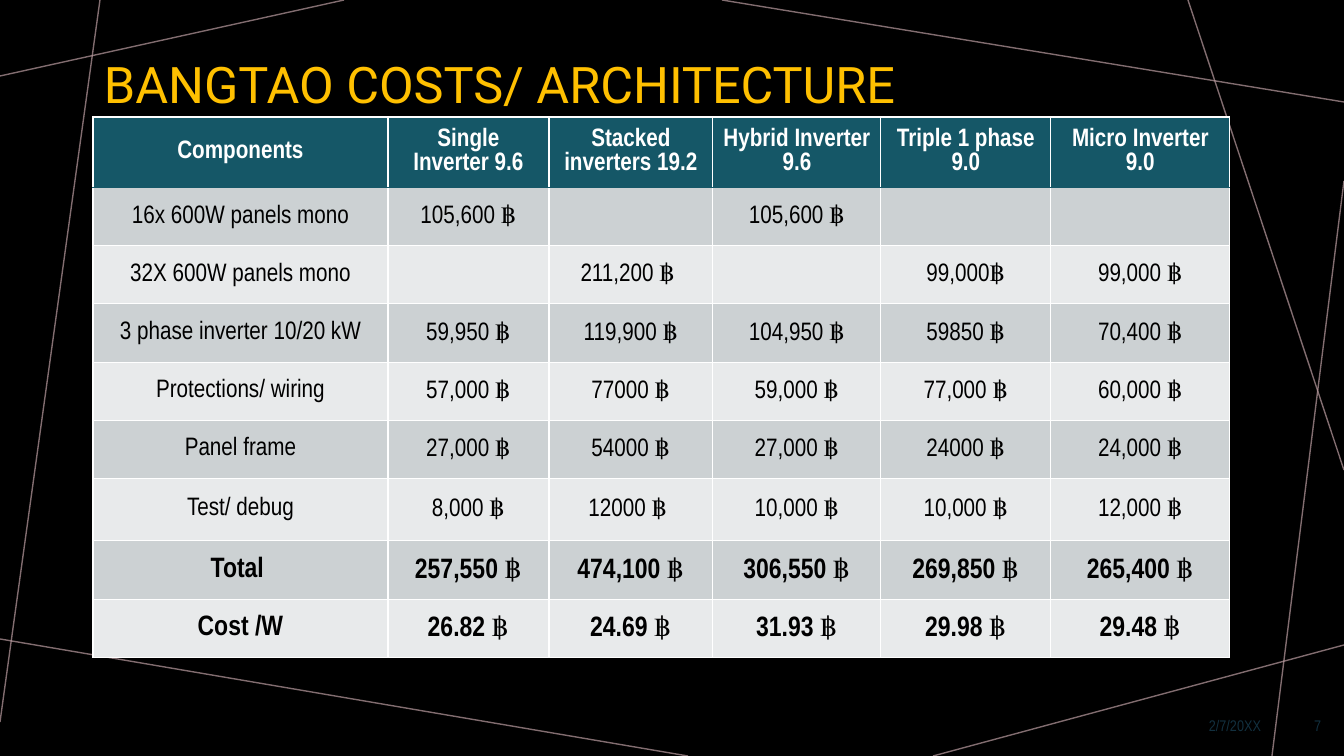
from lxml import etree
from pptx import Presentation
from pptx.dml import color
from pptx.enum import shapes, text
from pptx.oxml import ns
from pptx import util as u

PX = 914400 / 100.8
COLORS = {
    "background": "000000", "web": "BA9CA0", "title": "FFC000",
    "header": "155767", "band_dark": "CCD1D3", "band_light": "E8EAEB",
    "white": "FFFFFF", "black": "000000", "footer": "12303F",
}
BAHT = "฿"
WEB_LINES = [
    (344, 0, 0, 76), (100, 0, 0, 722), (688, 756, 0, 639),
    (1344, 645, 933, 756), (1344, 181, 1272, 756),
    (1344, 470, 1188, 0), (1344, 102, 722, 0),
]
COLUMN_WIDTHS = [295, 161, 164, 168, 170, 179]
ROW_HEIGHTS = [60, 58, 58, 59, 58, 58, 62, 59, 58]
COSTS = [
    ["Components", "Single Inverter 9.6", "Stacked inverters 19.2",
     "Hybrid Inverter 9.6", "Triple 1 phase 9.0", "Micro Inverter 9.0"],
    ["16x 600W panels mono", "105,600 ฿", "", "105,600 ฿", "", ""],
    ["32X 600W panels mono", "", "211,200 ฿ ", "", "99,000฿", "99,000 ฿"],
    ["3 phase inverter 10/20 kW", "59,950 ฿", "119,900 ฿", "104,950 ฿",
     "59850 ฿", "70,400 ฿"],
    ["Protections/ wiring", "57,000 ฿", "77000 ฿", "59,000 ฿", "77,000 ฿",
     "60,000 ฿"],
    ["Panel frame", "27,000 ฿", "54000 ฿", "27,000 ฿", "24000 ฿", "24,000 ฿"],
    ["Test/ debug", "8,000 ฿", "12000 ฿ ", "10,000 ฿", "10,000 ฿", "12,000 ฿"],
    ["Total ", "257,550 ฿", "474,100 ฿", "306,550 ฿", "269,850 ฿",
     "265,400 ฿"],
    ["Cost /W", "26.82 ฿", "24.69 ฿", "31.93 ฿", "29.98 ฿", "29.48 ฿"],
]


def px(length):
    """Turn pixels into EMU."""
    return u.Emu(round(length * PX))


def rgb(name):
    """Look up a named colour."""
    return color.RGBColor.from_string(COLORS[name])


def write(frame, content, *, size, ink, font="Arial Narrow", bold=False,
          align=text.PP_ALIGN.LEFT, spacing=1.0):
    """Fill a text frame, keeping the currency sign regular in bold text."""
    paragraph = frame.paragraphs[0]
    paragraph.alignment = align
    paragraph.line_spacing = spacing
    paragraph.font.size = u.Pt(size)
    pieces = content.partition(BAHT) if bold else [content]
    for piece in filter(None, pieces):
        run = paragraph.add_run()
        run.text = piece
        run.font.name = font
        run.font.size = u.Pt(size)
        run.font.bold = bold and piece != BAHT
        run.font.color.rgb = rgb(ink)


def add_label(slide, content, left, top, width, height, **style):
    """Add a vertically centred text box."""
    frame = slide.shapes.add_textbox(
        px(left), px(top), px(width), px(height)).text_frame
    frame.word_wrap = True
    frame.vertical_anchor = text.MSO_ANCHOR.MIDDLE
    write(frame, content, **style)


def add_web_line(slide, x1, y1, x2, y2):
    """Add one translucent background line."""
    line = slide.shapes.add_connector(
        shapes.MSO_CONNECTOR.STRAIGHT, px(x1), px(y1), px(x2), px(y2))
    line.line.width = u.Pt(1)
    line.line.color.rgb = rgb("web")
    properties = line._element.spPr
    tint = properties.find(".//" + ns.qn("a:srgbClr"))
    etree.SubElement(tint, ns.qn("a:alpha"), val="70000")
    etree.SubElement(properties, ns.qn("a:effectLst"))


def set_borders(cell, **edges):
    """Draw the cell edges from (colour, points) pairs keyed L, R, T, B."""
    properties = cell._tc.get_or_add_tcPr()
    for position, (edge, (name, points)) in enumerate(edges.items()):
        border = etree.Element(ns.qn(f"a:ln{edge}"), w=str(u.Pt(points)))
        fill = etree.SubElement(border, ns.qn("a:solidFill"))
        etree.SubElement(fill, ns.qn("a:srgbClr"), val=COLORS[name])
        properties.insert(position, border)


def row_style(row):
    """Give the fill and text format of a table row."""
    if row == 0:
        return "header", {"size": 18, "ink": "white", "bold": True}
    band = "band_dark" if row % 2 else "band_light"
    summary = row >= len(COSTS) - 2
    return band, {"size": 20 if summary else 18, "ink": "black",
                  "bold": summary}


def add_cost_table(slide, left, top):
    """Add the table of component costs per architecture."""
    table = slide.shapes.add_table(
        len(COSTS), len(COLUMN_WIDTHS), px(left), px(top),
        px(sum(COLUMN_WIDTHS)), px(sum(ROW_HEIGHTS))).table
    for column, width in zip(table.columns, COLUMN_WIDTHS):
        column.width = px(width)
    white, seam = ("white", 1), ("header", 0.75)
    for row, (costs, height) in enumerate(zip(COSTS, ROW_HEIGHTS)):
        table.rows[row].height = px(height)
        fill, style = row_style(row)
        for column, cost in enumerate(costs):
            cell = table.cell(row, column)
            cell.fill.solid()
            cell.fill.fore_color.rgb = rgb(fill)
            cell.vertical_anchor = text.MSO_ANCHOR.MIDDLE
            cell.margin_left = cell.margin_right = px(10)
            write(cell.text_frame, cost, align=text.PP_ALIGN.CENTER, **style)
            set_borders(cell, L=white, R=white,
                        T=seam if row == 1 else white,
                        B=seam if row == 0 else white)


def main():
    """Build the slide and save it."""
    deck = Presentation()
    deck.slide_width, deck.slide_height = px(1344), px(756)
    slide = deck.slides.add_slide(deck.slide_layouts[6])
    slide.background.fill.solid()
    slide.background.fill.fore_color.rgb = rgb("background")
    for ends in WEB_LINES:
        add_web_line(slide, *ends)
    add_label(slide, "BANGTAO COSTS/ ARCHITECTURE", 94, 11, 1092, 152,
              size=36, ink="title", font="Roboto", spacing=0.9)
    add_cost_table(slide, 93, 117)
    for footer, left, width in [("2/7/20XX", 1151, 120), ("7", 1280, 51)]:
        add_label(slide, footer, left, 710, width, 30, size=11, ink="footer",
                  align=text.PP_ALIGN.RIGHT)
    deck.save("out.pptx")


if __name__ == "__main__":
    main()
